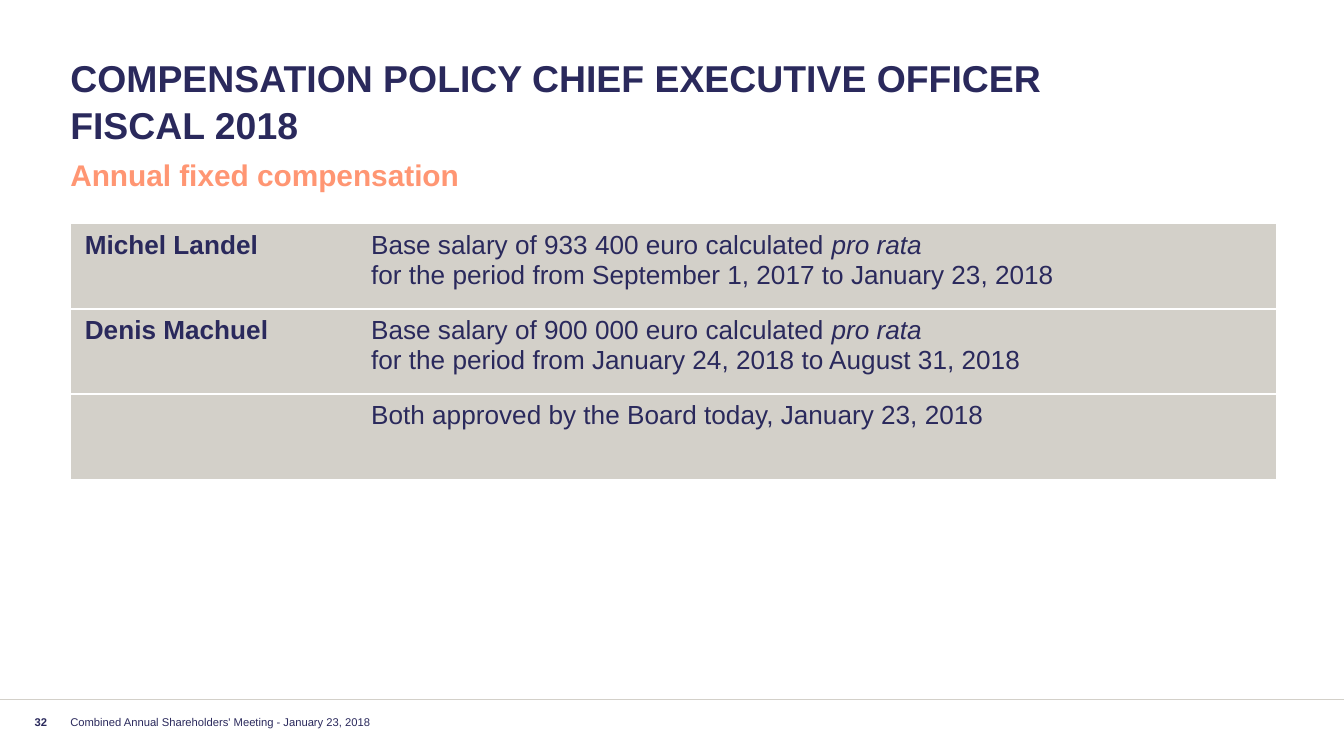
"""Builds the slide on the annual fixed compensation of the chief executive."""
import lxml.etree
import pptx
import pptx.dml.color
import pptx.enum.shapes
import pptx.enum.text
import pptx.oxml.ns
import pptx.util

Cm = pptx.util.Cm
Pt = pptx.util.Pt
ALIGN = pptx.enum.text.PP_ALIGN
COLORS = {"navy": "2A295C", "coral": "FF9673", "sand": "D3D0C9", "white": "FFFFFF"}
LEFT = 1.33
WIDTH = 22.78
ROWS = [
    ("Michel Landel",
     "Base salary of 933 400 euro calculated *pro rata *\n"
     "for the period from September 1, 2017 to January 23, 2018"),
    ("Denis Machuel",
     "Base salary of 900 000 euro calculated *pro rata *\n"
     "for the period from January 24, 2018 to August 31, 2018"),
    ("", "Both approved by the Board today, January 23, 2018"),
]


def color(name):
    return pptx.dml.color.RGBColor.from_string(COLORS[name])


def write(frame, text, size=14, tint="navy", bold=False, align=ALIGN.LEFT, space=1.0):
    para = frame.paragraphs[0]
    para.alignment = align
    para.line_spacing = space
    for row, line in enumerate(text.split("\n")):
        if row:
            para.add_line_break()
        for part, words in enumerate(line.split("*")):
            if words:
                run = para.add_run()
                run.text = words
                font = run.font
                font.name, font.size = "Arial", Pt(size)
                font.bold, font.italic = bold, part % 2 == 1
                font.color.rgb = color(tint)


def add_text(slide, text, left, top, width, height, **style):
    box = slide.shapes.add_textbox(Cm(left), Cm(top), Cm(width), Cm(height))
    frame = box.text_frame
    frame.word_wrap = True
    frame.margin_left = frame.margin_right = 0
    frame.margin_top = frame.margin_bottom = 0
    write(frame, text, **style)


def add_rule(slide, top, width):
    kind = pptx.enum.shapes.MSO_CONNECTOR.STRAIGHT
    rule = slide.shapes.add_connector(kind, 0, Cm(top), width, Cm(top))
    rule.line.color.rgb = color("sand")
    rule.line.width = Pt(0.25)
    lxml.etree.SubElement(rule._element.spPr, pptx.oxml.ns.qn("a:effectLst"))


def set_edge(cell, side, shown):
    qn = pptx.oxml.ns.qn
    edge = lxml.etree.SubElement(cell._tc.get_or_add_tcPr(), qn("a:ln" + side))
    if shown:
        edge.set("w", str(Pt(1)))
        fill = lxml.etree.SubElement(edge, qn("a:solidFill"))
        lxml.etree.SubElement(fill, qn("a:srgbClr"), val=COLORS["white"])
    else:
        edge.set("w", "0")
        lxml.etree.SubElement(edge, qn("a:noFill"))


def add_grid(slide, rows, top, widths, height):
    last = len(rows) - 1
    shape = slide.shapes.add_table(len(rows), len(widths), Cm(LEFT + 0.02), Cm(top),
                                   Cm(sum(widths)), Cm(height * len(rows)))
    table = shape.table
    table.first_row = table.horz_banding = False
    for col, width in zip(table.columns, widths):
        col.width = Cm(width)
    for r, texts in enumerate(rows):
        table.rows[r].height = Cm(height)
        for c, text in enumerate(texts):
            cell = table.cell(r, c)
            for side, shown in (("L", False), ("R", False), ("T", r > 0), ("B", r < last)):
                set_edge(cell, side, shown)
            cell.fill.solid()
            cell.fill.fore_color.rgb = color("sand")
            write(cell.text_frame, text, bold=c == 0)


def main():
    deck = pptx.Presentation()
    deck.slide_width, deck.slide_height = Cm(25.4), Cm(14.28)
    slide = deck.slides.add_slide(deck.slide_layouts[6])
    add_rule(slide, 13.21, deck.slide_width)
    add_text(slide, "COMPENSATION POLICY CHIEF EXECUTIVE OFFICER\nFISCAL 2018",
             LEFT, 1, WIDTH, 1.88, size=20, bold=True, space=1.05)
    add_text(slide, "Annual fixed compensation", LEFT, 2.92, WIDTH, 0.81,
             size=16, tint="coral", bold=True, space=1.05)
    add_grid(slide, ROWS, 4.24, (5.41, 17.35), 1.6)
    add_text(slide, "Combined Annual Shareholders' Meeting - January 23, 2018",
             LEFT, 13.52, 9.98, 0.3, size=6)
    add_text(slide, "32", 0.23, 13.52, 0.66, 0.33, size=6, bold=True, align=ALIGN.RIGHT)
    deck.save("out.pptx")


if __name__ == "__main__":
    main()
